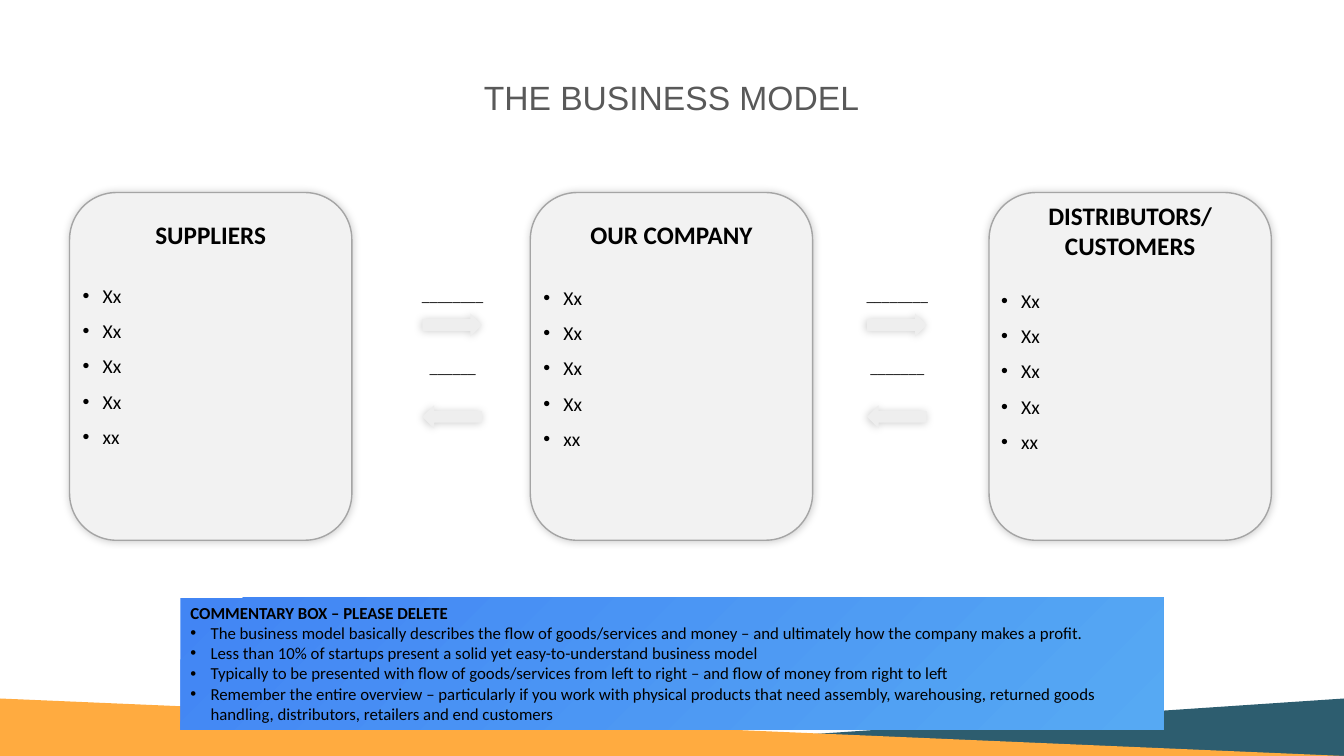
from lxml import etree
from pptx import Presentation
from pptx.dml.color import RGBColor
from pptx.enum import shapes, text
from pptx.oxml import ns
from pptx.util import Inches, Pt

BLACK = RGBColor(0x00, 0x00, 0x00)
GREY = RGBColor(0x59, 0x59, 0x59)
CARD = RGBColor(0xF2, 0xF2, 0xF2)
EDGE = RGBColor(0xA5, 0xA5, 0xA5)
ARROW = RGBColor(0xEE, 0xEE, 0xEE)
TEAL = RGBColor(0x2D, 0x5D, 0x6F)
ORANGE = RGBColor(0xFF, 0xAB, 0x40)
BLUE = RGBColor(0x42, 0x85, 0xF4)
SKY = RGBColor(0x56, 0xA9, 0xF3)

KIND = shapes.MSO_SHAPE
MID = text.PP_ALIGN.CENTER
LEFT = text.PP_ALIGN.LEFT

ITEMS = ["Xx", "Xx", "Xx", "Xx", "xx"]
CARDS = [
    (0.69, ["SUPPLIERS"], 2.13, 0.72, 2.65),
    (5.26, ["OUR COMPANY"], 2.13, 5.29, 2.67),
    (9.81, ["DISTRIBUTORS/", "CUSTOMERS"], 1.94, 9.83, 2.7),
]
FLOWS = [(4.49, "________", "______"), (8.9, "________", "_______")]
HEAD = "COMMENTARY BOX – PLEASE DELETE"
NOTES = [
    "The business model basically describes the flow of goods/services and money – "
    "and ultimately how the company makes a profit.",
    "Less than 10% of startups present a solid yet easy-to-understand business model",
    "Typically to be presented with flow of goods/services from left to right – "
    "and flow of money from right to left",
    "Remember the entire overview – particularly if you work with physical products that "
    "need assembly, warehousing, returned goods handling, distributors, retailers and end customers",
]


def add_form(slide, kind, box, fill=None):
    form = slide.shapes.add_shape(kind, *map(Inches, box))
    form.shadow.inherit = False
    form.line.fill.background()
    if fill is not None:
        form.fill.solid()
        form.fill.fore_color.rgb = fill
    return form


def add_glow(form, dist=0, angle=0):
    effects = form._element.spPr.find(ns.qn("a:effectLst"))
    glow = etree.SubElement(
        effects, ns.qn("a:outerShdw"), blurRad=str(Pt(6)), dist=str(Pt(dist)),
        dir=str(angle * 60000), algn="ctr", rotWithShape="0")
    shade = etree.SubElement(glow, ns.qn("a:srgbClr"), val=str(BLACK))
    etree.SubElement(shade, ns.qn("a:alpha"), val="20000")


def set_bullet(para):
    props = para._p.get_or_add_pPr()
    props.set("marL", str(Inches(0.2)))
    props.set("indent", str(-Inches(0.2)))
    color = etree.SubElement(props, ns.qn("a:buClr"))
    etree.SubElement(color, ns.qn("a:srgbClr"), val=str(BLACK))
    etree.SubElement(props, ns.qn("a:buFont"), typeface="Arial")
    etree.SubElement(props, ns.qn("a:buChar"), char="•")


def write(frame, lines, size, bold=False, align=LEFT, bullet=False, space=None):
    for line in lines:
        para = frame.paragraphs[0]
        if para.runs:
            para = frame.add_paragraph()
        para.text = line
        para.alignment = align
        if space:
            para.line_spacing = space
        if bullet:
            set_bullet(para)
        para.font.size = Pt(size)
        para.font.name = "Calibri"
        para.font.bold = bold
        para.font.color.rgb = BLACK


def add_label(slide, box, lines, size, wrap=True, **style):
    frame = slide.shapes.add_textbox(*map(Inches, box)).text_frame
    frame.word_wrap = wrap
    write(frame, lines, size, **style)


def add_title(slide):
    title = slide.shapes.title
    title.left, title.top, title.width, title.height = map(Inches, (2.99, 0.48, 7.34, 1.02))
    frame = title.text_frame
    frame.text = "THE BUSINESS MODEL"
    frame.vertical_anchor = text.MSO_ANCHOR.MIDDLE
    frame.auto_size = text.MSO_AUTO_SIZE.NONE
    para = frame.paragraphs[0]
    para.alignment = MID
    para.line_spacing = 0.9
    para.font.size = Pt(24)
    para.font.name = "Arial"
    para.font.color.rgb = GREY


def add_card(slide, left, name, top, inset, start):
    card = add_form(slide, KIND.ROUNDED_RECTANGLE, (left, 1.91, 2.8, 3.45), CARD)
    card.line.color.rgb = EDGE
    card.line.width = Pt(1)
    add_glow(card)
    add_label(slide, (left, top, 2.8, 0.4), name, 18, bold=True, align=MID)
    add_label(slide, (inset, start, 2.78, 1.83), ITEMS, 14, bullet=True, space=1.5)


def add_flow(slide, center, goods, money):
    for label, top, arrow, turn in ((goods, 2.79, 3.11, 0), (money, 3.5, 4.02, 180)):
        add_label(slide, (center - 0.41, top, 0.82, 0.29), [label], 11, wrap=False, align=MID)
        form = add_form(slide, KIND.RIGHT_ARROW, (center - 0.3, arrow, 0.59, 0.23), ARROW)
        form.rotation = turn
        add_glow(form, 1, 135)


def add_notes(slide):
    box = add_form(slide, KIND.RECTANGLE, (1.79, 5.93, 9.75, 1.31))
    box.fill.gradient()
    box.fill.gradient_angle = 315
    for stop, color in zip(box.fill.gradient_stops, (BLUE, SKY)):
        stop.color.rgb = color
    frame = box.text_frame
    frame.word_wrap = True
    frame.vertical_anchor = text.MSO_ANCHOR.TOP
    write(frame, [HEAD], 12, bold=True)
    write(frame, NOTES, 12, bullet=True)


def main():
    deck = Presentation()
    deck.slide_width, deck.slide_height = Inches(13.33), Inches(7.5)
    slide = deck.slides.add_slide(deck.slide_layouts[5])
    wedge = add_form(slide, KIND.RIGHT_TRIANGLE, (4.83, 6.93, 8.5, 0.57), TEAL)
    wedge._element.spPr.xfrm.set("flipH", "1")
    add_form(slide, KIND.RIGHT_TRIANGLE, (0, 6.93, 13.33, 0.57), ORANGE)
    add_title(slide)
    for card in CARDS:
        add_card(slide, *card)
    for flow in FLOWS:
        add_flow(slide, *flow)
    add_notes(slide)
    deck.save("out.pptx")


if __name__ == "__main__":
    main()
